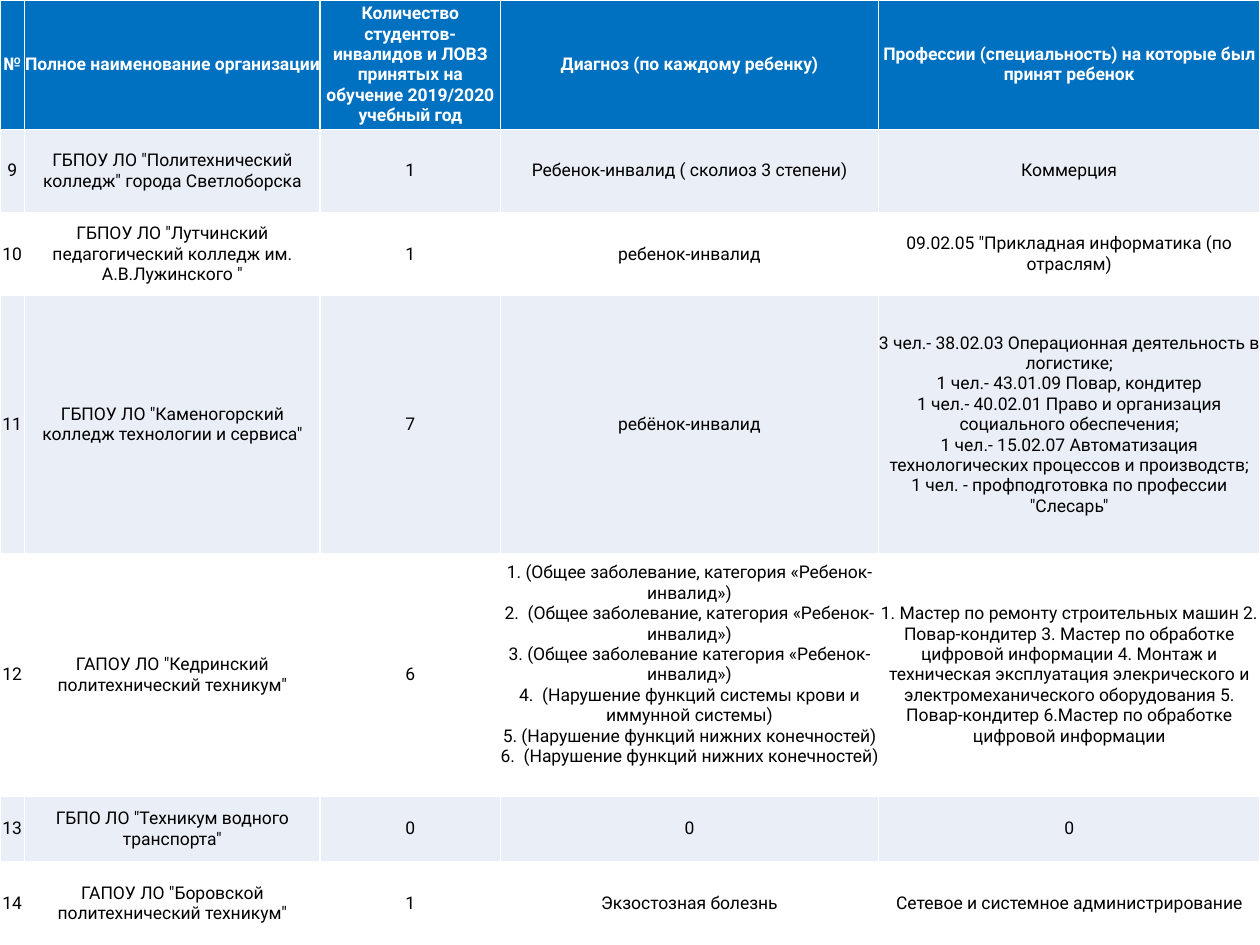
from pptx import Presentation
from pptx.dml.color import RGBColor
from pptx.enum import text
from pptx.oxml import parse_xml
from pptx.oxml.ns import nsdecls
from pptx.util import Pt

WHITE = RGBColor(0xFF, 0xFF, 0xFF)
BLACK = RGBColor(0, 0, 0)
HEADER_BLUE = RGBColor(0x00, 0x70, 0xC0)
BAND_BLUE = RGBColor(0xEA, 0xEF, 0xF7)

COLUMN_WIDTHS = [14, 169, 103, 216, 218]
ROW_HEIGHTS = [74, 47.5, 47.5, 147.5, 138.5, 37.5, 47.5]
LINE_HEIGHT = 11.7

# A line break inside a cell is written as \v.
diagnoses = "\v".join([
    "1. (Общее заболевание, категория «Ребенок-инвалид»)",
    "2.  (Общее заболевание, категория «Ребенок-инвалид»)",
    "3. (Общее заболевание категория «Ребенок-инвалид»)",
    "4.  (Нарушение функций системы крови и иммунной системы)",
    "5. (Нарушение функций нижних конечностей)",
    "6.  (Нарушение функций нижних конечностей)",
])
service_professions = "\v".join([
    "3 чел.- 38.02.03 Операционная деятельность в логистике;",
    "1 чел.- 43.01.09 Повар, кондитер",
    "1 чел.- 40.02.01 Право и организация социального обеспечения;",
    "1 чел.- 15.02.07 Автоматизация технологических процессов и производств;",
    '1 чел. - профподготовка по профессии "Слесарь"',
])
technical_professions = (
    "1. Мастер по ремонту строительных машин 2. Повар-кондитер "
    "3. Мастер по обработке цифровой информации 4. Монтаж и техническая "
    "эксплуатация элекрического и электромеханического оборудования "
    "5. Повар-кондитер 6.Мастер по обработке цифровой информации"
)
rows = [
    ["№", "Полное наименование организации",
     "Количество студентов-инвалидов и ЛОВЗ принятых на обучение 2019/2020 учебный год",
     "Диагноз (по каждому ребенку)",
     "Профессии (специальность) на которые был принят ребенок"],
    ["9", 'ГБПОУ ЛО "Политехнический колледж" города Светлоборска', "1",
     "Ребенок-инвалид ( сколиоз 3 степени)", "Коммерция"],
    ["10", 'ГБПОУ ЛО "Лутчинский педагогический колледж им. А.В.Лужинского "', "1",
     "ребенок-инвалид", '09.02.05 "Прикладная информатика (по отраслям)'],
    ["11", 'ГБПОУ ЛО "Каменогорский колледж технологии и сервиса"', "7",
     "ребёнок-инвалид", service_professions],
    ["12", 'ГАПОУ ЛО "Кедринский политехнический техникум"', "6",
     diagnoses, technical_professions],
    ["13", 'ГБПО ЛО "Техникум водного транспорта"', "0", "0", "0"],
    ["14", 'ГАПОУ ЛО "Боровской политехнический техникум"', "1",
     "Экзостозная болезнь", "Сетевое и системное администрирование"],
]


def add_white_borders(cell):
    properties = cell._tc.get_or_add_tcPr()
    for position, side in enumerate(("lnL", "lnR", "lnT", "lnB")):
        border = parse_xml(
            f'<a:{side} {nsdecls("a")} w="{Pt(1)}"><a:solidFill>'
            f'<a:srgbClr val="{WHITE}"/></a:solidFill></a:{side}>')
        properties.insert(position, border)


presentation = Presentation()
presentation.slide_width = Pt(720)
presentation.slide_height = Pt(540)
slide = presentation.slides.add_slide(presentation.slide_layouts[6])

table = slide.shapes.add_table(
    len(rows), len(COLUMN_WIDTHS), 0, 0, Pt(720), Pt(540)).table
for column, width in zip(table.columns, COLUMN_WIDTHS):
    column.width = Pt(width)
for row, height in zip(table.rows, ROW_HEIGHTS):
    row.height = Pt(height)

for row_index, row_texts in enumerate(rows):
    is_header = row_index == 0
    for column_index, cell_text in enumerate(row_texts):
        cell = table.cell(row_index, column_index)
        cell.text = cell_text
        cell.vertical_anchor = text.MSO_ANCHOR.MIDDLE
        cell.margin_left = cell.margin_right = cell.margin_top = 0
        cell.margin_bottom = Pt(LINE_HEIGHT) if cell_text == diagnoses else 0
        if row_index % 2 or is_header:
            cell.fill.solid()
            cell.fill.fore_color.rgb = HEADER_BLUE if is_header else BAND_BLUE
        else:
            cell.fill.background()
        add_white_borders(cell)
        paragraph = cell.text_frame.paragraphs[0]
        paragraph.alignment = text.PP_ALIGN.CENTER
        paragraph.font.name = "Roboto"
        paragraph.font.size = Pt(10)
        paragraph.font.bold = is_header
        paragraph.font.color.rgb = WHITE if is_header else BLACK

presentation.save("out.pptx")
